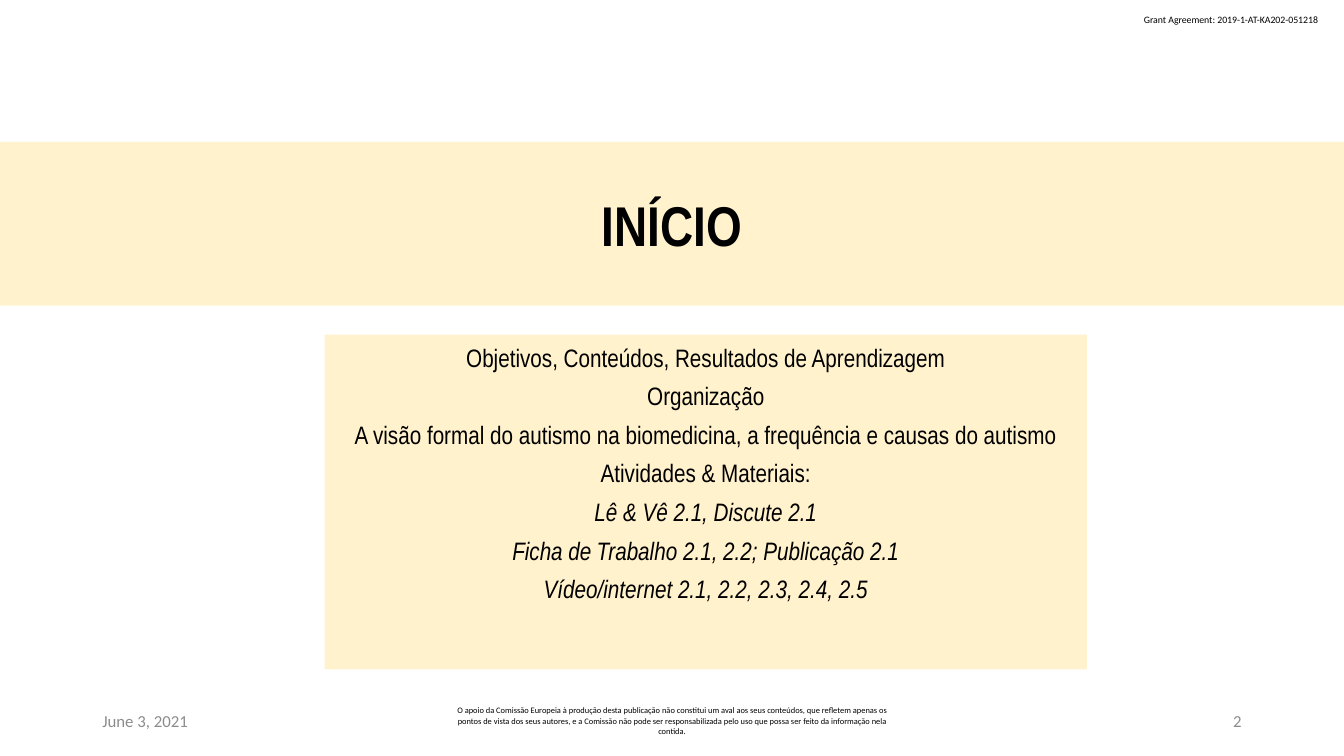
from dataclasses import dataclass

from pptx import Presentation
from pptx.dml.color import RGBColor
from pptx.enum.shapes import MSO_SHAPE
from pptx.enum.text import MSO_ANCHOR, PP_ALIGN
from pptx.slide import Slide
from pptx.text.text import TextFrame
from pptx.util import Inches, Pt

# Grid: 160 columns by 90 rows of square cells
COLUMNS, ROWS = 160, 90
SLIDE_WIDTH, SLIDE_HEIGHT = Inches(13.33), Inches(7.5)


@dataclass(frozen=True)
class Theme:
    body_font: str = "Calibri"
    panel_font: str = "Arial Narrow"
    ink: RGBColor = RGBColor(0x00, 0x00, 0x00)
    muted: RGBColor = RGBColor(0x8C, 0x8C, 0x8C)
    cream: RGBColor = RGBColor(0xFF, 0xF2, 0xCC)
    title_size: int = 40
    topic_size: int = 18
    footer_size: int = 12
    grant_size: int = 7
    disclaimer_size: int = 6


THEME = Theme()


@dataclass(frozen=True)
class Area:
    column: float
    row: float
    columns: float
    rows: float

    def box(self) -> tuple[int, int, int, int]:
        cell_width, cell_height = SLIDE_WIDTH / COLUMNS, SLIDE_HEIGHT / ROWS
        return (int(self.column * cell_width), int(self.row * cell_height),
                int(self.columns * cell_width), int(self.rows * cell_height))


@dataclass(frozen=True)
class Line:
    text: str
    size: int
    font: str = THEME.body_font
    color: RGBColor = THEME.ink
    align: PP_ALIGN = PP_ALIGN.CENTER
    bold: bool = False
    italic: bool = False
    space_after: int = 0


@dataclass(frozen=True)
class Label:
    area: Area
    line: Line
    anchor: MSO_ANCHOR = MSO_ANCHOR.MIDDLE
    wrap: bool = True


@dataclass(frozen=True)
class Panel:
    area: Area
    lines: list[Line]
    anchor: MSO_ANCHOR


def write_lines(frame: TextFrame, lines: list[Line]) -> None:
    for index, line in enumerate(lines):
        paragraph = frame.add_paragraph() if index else frame.paragraphs[0]
        paragraph.alignment = line.align
        paragraph.space_after = Pt(line.space_after)
        run = paragraph.add_run()
        run.text = line.text
        run.font.name = line.font
        run.font.size = Pt(line.size)
        run.font.bold = line.bold
        run.font.italic = line.italic
        run.font.color.rgb = line.color


def draw_label(slide: Slide, label: Label) -> None:
    frame = slide.shapes.add_textbox(*label.area.box()).text_frame
    frame.word_wrap = label.wrap
    frame.vertical_anchor = label.anchor
    write_lines(frame, [label.line])


def draw_panel(slide: Slide, panel: Panel) -> None:
    shape = slide.shapes.add_shape(MSO_SHAPE.RECTANGLE, *panel.area.box())
    shape.shadow.inherit = False
    shape.fill.solid()
    shape.fill.fore_color.rgb = THEME.cream
    shape.line.fill.background()
    frame = shape.text_frame
    frame.word_wrap = True
    frame.vertical_anchor = panel.anchor
    frame.margin_left = frame.margin_right = Inches(0.13)
    frame.margin_top = frame.margin_bottom = Inches(0.07)
    write_lines(frame, panel.lines)


def topic(text: str, italic: bool = False) -> Line:
    return Line(text, THEME.topic_size, THEME.panel_font, italic=italic, space_after=6)


# Header and footer
LABELS = [
    Label(Area(135, 1, 23.6, 2.6),
          Line("Grant Agreement: 2019-1-AT-KA202-051218", THEME.grant_size, align=PP_ALIGN.LEFT),
          MSO_ANCHOR.TOP, wrap=False),
    Label(Area(11, 83.4, 36, 4.8),
          Line("June 3, 2021", THEME.footer_size, color=THEME.muted, align=PP_ALIGN.LEFT)),
    Label(Area(53, 83.4, 54, 4.8),
          Line("O apoio da Comissão Europeia à produção desta publicação não constitui um aval "
               "aos seus conteúdos, que refletem apenas os pontos de vista dos seus autores, e a "
               "Comissão não pode ser responsabilizada pelo uso que possa ser feito da informação "
               "nela contida.", THEME.disclaimer_size)),
    Label(Area(113, 83.4, 36, 4.8),
          Line("2", THEME.footer_size, color=THEME.muted, align=PP_ALIGN.RIGHT)),
]

# Title band and topic panel
PANELS = [
    Panel(Area(0, 16.9, COLUMNS, 19.5),
          [Line("INÍCIO", THEME.title_size, THEME.panel_font, bold=True)], MSO_ANCHOR.MIDDLE),
    Panel(Area(38.65, 39.85, 90.75, 39.85), [
        topic("Objetivos, Conteúdos, Resultados de Aprendizagem"),
        topic("Organização"),
        topic("A visão formal do autismo na biomedicina, a frequência e causas do autismo"),
        topic("Atividades & Materiais:"),
        topic("Lê & Vê 2.1, Discute 2.1", italic=True),
        topic("Ficha de Trabalho 2.1, 2.2; Publicação 2.1", italic=True),
        topic("Vídeo/internet 2.1, 2.2, 2.3, 2.4, 2.5", italic=True),
    ], MSO_ANCHOR.TOP),
]


def main() -> None:
    presentation = Presentation()
    presentation.slide_width, presentation.slide_height = SLIDE_WIDTH, SLIDE_HEIGHT
    slide = presentation.slides.add_slide(presentation.slide_layouts[6])
    for label in LABELS:
        draw_label(slide, label)
    for panel in PANELS:
        draw_panel(slide, panel)
    presentation.save("out.pptx")


if __name__ == "__main__":
    main()
